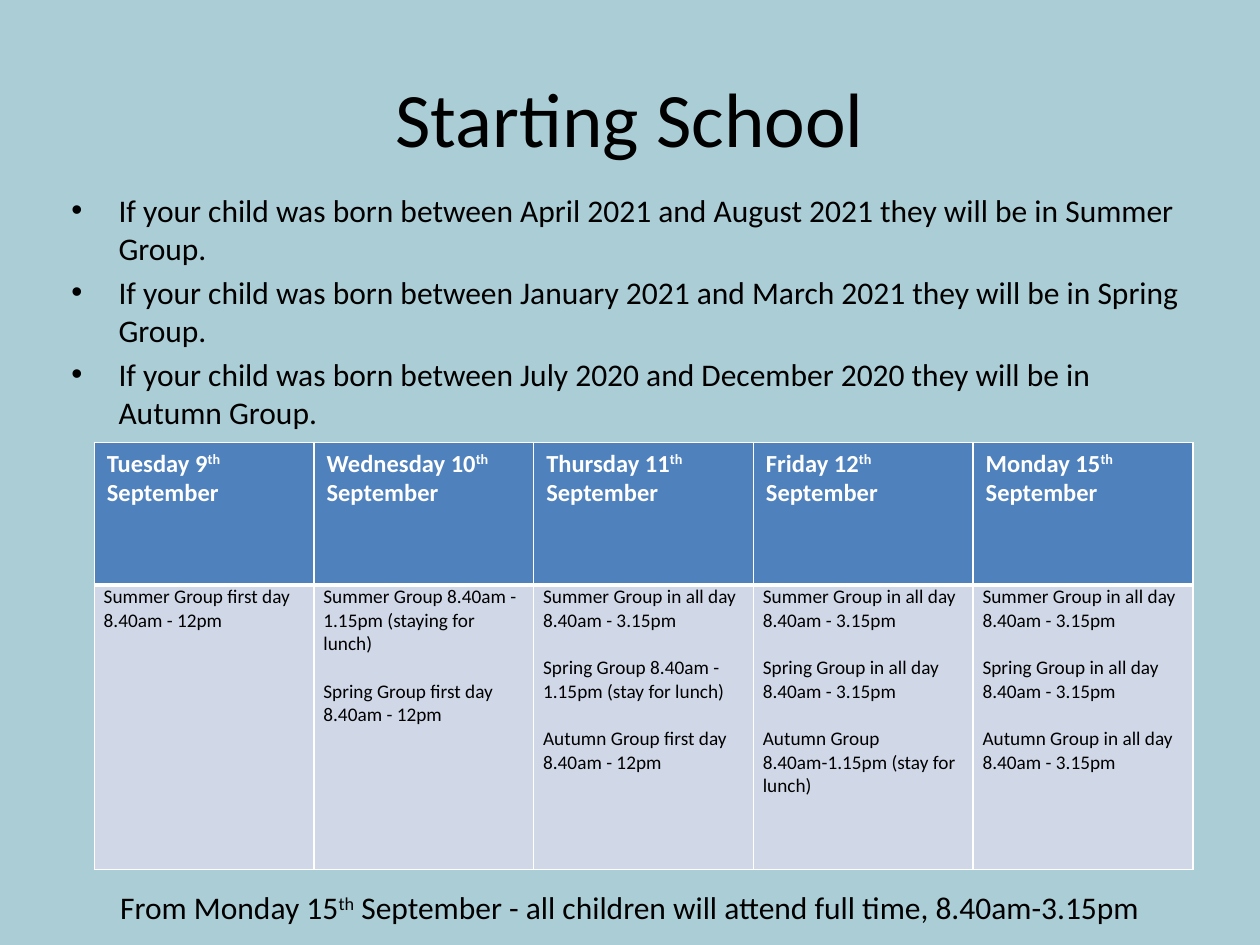
from lxml import etree
from pptx import Presentation
from pptx import util as u
from pptx.dml.color import RGBColor
from pptx.enum import text
from pptx.oxml import ns

BACKGROUND = RGBColor(0xAB, 0xCD, 0xD6)
BLACK = RGBColor(0x00, 0x00, 0x00)
WHITE = RGBColor(0xFF, 0xFF, 0xFF)
HEADER_BLUE = RGBColor(0x4F, 0x81, 0xBD)
CELL_BLUE = RGBColor(0xD0, 0xD8, 0xE8)
FONT = "Calibri"

BIRTH_GROUPS = [
    "If your child was born between April 2021 and August 2021 they will be in Summer Group.",
    "If your child was born between January 2021 and March 2021 they will be in Spring Group.",
    "If your child was born between July 2020 and December 2020 they will be in Autumn Group.",
]
ALL_DAY = "{} Group in all day 8.40am - 3.15pm"
FIRST_DAY = "{} Group first day 8.40am - 12pm"
# Each day: heading paragraphs, then the groups that attend
TIMETABLE = [
    (["Tuesday 9^th^ September"], [FIRST_DAY.format("Summer")]),
    (["Wednesday 10^th^", "September"],
     ["Summer Group 8.40am - 1.15pm (staying for lunch)", FIRST_DAY.format("Spring")]),
    (["Thursday 11^th^ September"],
     [ALL_DAY.format("Summer"), "Spring Group 8.40am - 1.15pm (stay for lunch)",
      FIRST_DAY.format("Autumn")]),
    (["Friday 12^th^ September"],
     [ALL_DAY.format("Summer"), ALL_DAY.format("Spring"),
      "Autumn Group 8.40am-1.15pm (stay for lunch)"]),
    (["Monday 15^th^ September"],
     [ALL_DAY.format(season) for season in ("Summer", "Spring", "Autumn")]),
]
CLOSING = "From Monday 15^th^ September - all children will attend full time, 8.40am-3.15pm"


def add_bullet(paragraph, indent):
    properties = paragraph._p.get_or_add_pPr()
    properties.set("marL", str(indent))
    properties.set("indent", str(-indent))
    etree.SubElement(properties, ns.qn("a:buFont")).set("typeface", "Arial")
    etree.SubElement(properties, ns.qn("a:buChar")).set("char", "•")


def write_text(frame, paragraphs, size, color=BLACK, bold=False, align=None, gap=0, indent=None):
    """Fill a frame; text between carets is set as superscript."""
    frame.word_wrap = True
    for index, content in enumerate(paragraphs):
        paragraph = frame.add_paragraph() if index else frame.paragraphs[0]
        if indent:
            add_bullet(paragraph, indent)
        paragraph.alignment = align
        paragraph.space_before = u.Pt(gap if index else 0)
        for position, part in enumerate(content.split("^")):
            if not part:
                continue
            run = paragraph.add_run()
            run.text = part
            run.font.name = FONT
            run.font.size = u.Pt(size)
            run.font.bold = bold
            run.font.color.rgb = color
            if position % 2:
                run._r.get_or_add_rPr().set("baseline", "30000")


def set_borders(cell, **widths):
    properties = cell._tc.get_or_add_tcPr()
    for side in "LRTB":
        line = etree.SubElement(properties, ns.qn("a:ln" + side))
        line.set("w", str(u.Pt(widths.get(side, 1))))
        fill = etree.SubElement(line, ns.qn("a:solidFill"))
        etree.SubElement(fill, ns.qn("a:srgbClr")).set("val", str(WHITE))


def fill_cell(cell, color):
    cell.fill.solid()
    cell.fill.fore_color.rgb = color


def place_title(slide, left, top, width, height):
    title = slide.shapes.title
    title.left, title.top, title.width, title.height = left, top, width, height
    title.text_frame.vertical_anchor = text.MSO_ANCHOR.MIDDLE
    write_text(title.text_frame, ["Starting School"], 44, align=text.PP_ALIGN.CENTER)


def add_text_box(slide, left, top, width, height, paragraphs, **text_format):
    box = slide.shapes.add_textbox(left, top, width, height)
    write_text(box.text_frame, paragraphs, 18, **text_format)


def add_timetable(slide, left, top, width, height):
    table = slide.shapes.add_table(2, len(TIMETABLE), left, top, width, height).table
    table.rows[0].height = u.Cm(2.87)
    table.rows[1].height = height - table.rows[0].height
    for column, (heading, groups) in enumerate(TIMETABLE):
        table.columns[column].width = width // len(TIMETABLE)

        # Day
        header = table.cell(0, column)
        set_borders(header, B=3)
        fill_cell(header, HEADER_BLUE)
        write_text(header.text_frame, heading, 14, color=WHITE, bold=True)

        # Groups, one blank line's height apart
        body = table.cell(1, column)
        set_borders(body, T=3)
        fill_cell(body, CELL_BLUE)
        body.margin_left = body.margin_right = u.Cm(0.19)
        body.margin_top = body.margin_bottom = 0
        write_text(body.text_frame, groups, 11, gap=13.4)


def main():
    presentation = Presentation()
    presentation.slide_width, presentation.slide_height = u.Cm(25.4), u.Cm(19.05)
    slide = presentation.slides.add_slide(presentation.slide_layouts[5])
    slide.background.fill.solid()
    slide.background.fill.fore_color.rgb = BACKGROUND

    place_title(slide, u.Cm(1.27), u.Cm(0.76), u.Cm(22.86), u.Cm(3.18))
    # Birth dates and groups
    add_text_box(slide, u.Cm(1.19), u.Cm(3.73), u.Cm(22.86), u.Cm(12.57),
                 BIRTH_GROUPS, gap=3.6, indent=u.Cm(0.95))
    add_timetable(slide, u.Cm(1.9), u.Cm(8.92), u.Cm(22.15), u.Cm(8.61))
    # Closing line
    add_text_box(slide, u.Cm(0.4), u.Cm(17.78), u.Cm(24.6), u.Cm(1.02),
                 [CLOSING], align=text.PP_ALIGN.CENTER)
    presentation.save("out.pptx")


if __name__ == "__main__":
    main()
